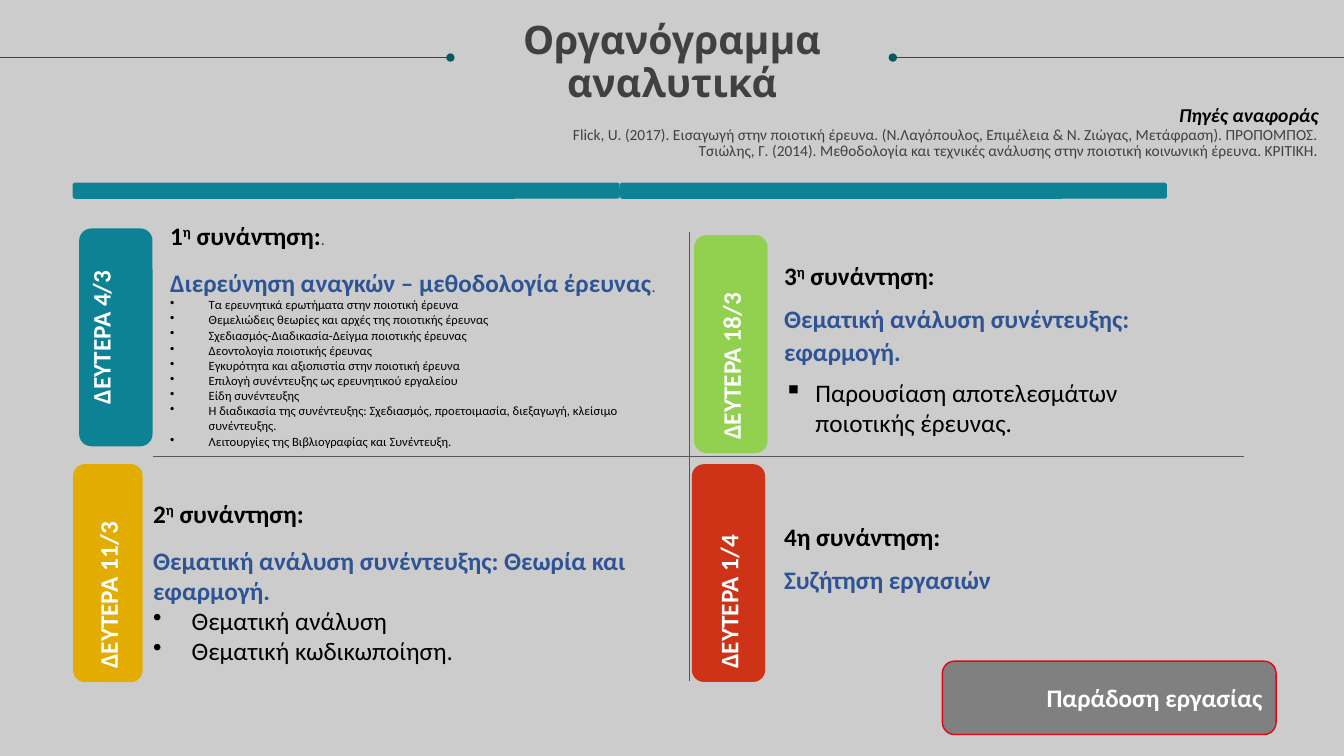
from lxml import etree
from pptx import Presentation
from pptx.dml.color import RGBColor
from pptx.enum.shapes import MSO_CONNECTOR, MSO_SHAPE
from pptx.enum.text import MSO_ANCHOR, PP_ALIGN
from pptx.oxml.ns import qn
from pptx.util import Cm, Pt

# Content: a span is (text, style)
STYLES = {  # font, size, colour, bold, italic
    "title": ("League Spartan", 28, "404040", True, False),
    "sources": ("Calibri", 14, "000000", True, True),
    "citation": ("Calibri", 11, "404040", False, False),
    "meeting": ("Calibri", 18, "000000", True, False),
    "ordinal": ("Calibri", 18, "000000", True, False),
    "subject": ("Calibri", 18, "2F5496", True, False),
    "dot": ("Cabin", 14, "404040", False, False),
    "small": ("Calibri", 9, "000000", False, False),
    "large": ("Calibri", 18, "000000", False, False),
    "label": ("Calibri", 18, "FFFFFF", True, False),
}
HEADER = [
    ("Οργανόγραμμα", "title", PP_ALIGN.CENTER),
    ("αναλυτικά", "title", PP_ALIGN.CENTER),
    ("Πηγές αναφοράς", "sources", PP_ALIGN.RIGHT),
    ("Flick, U. (2017). Εισαγωγή στην ποιοτική έρευνα. (Ν.Λαγόπουλος, Επιμέλεια "
     "& Ν. Ζιώγας, Μετάφραση). ΠΡΟΠΟΜΠΟΣ.", "citation", PP_ALIGN.RIGHT),
    ("Τσιώλης, Γ. (2014). Μεθοδολογία και τεχνικές ανάλυσης στην ποιοτική "
     "κοινωνική έρευνα. ΚΡΙΤΙΚΗ.", "citation", PP_ALIGN.RIGHT),
]
LEFT_SPACING = {"before": 12, "after": 0, "line": 1.0}
RIGHT_SPACING = {"before": 0, "after": 8, "line": 1.07}
MEETINGS = [
    {"area": (4.29, 5.54, 12.4, 6.83), "spacing": LEFT_SPACING,
     "headings": [
         [("1", "meeting"), ("η", "ordinal"), (" συνάντηση:", "meeting"), (".", "dot")],
         [("Διερεύνηση αναγκών – μεθοδολογία έρευνας", "subject"), (".", "dot")]],
     "bullet": ("•", 0.97, "small"),
     "points": [
         "Τα ερευνητικά ερωτήματα στην ποιοτική έρευνα",
         "Θεμελιώδεις θεωρίες και αρχές της ποιοτικής έρευνας",
         "Σχεδιασμός-Διαδικασία-Δείγμα ποιοτικής έρευνας",
         "Δεοντολογία ποιοτικής έρευνας",
         "Εγκυρότητα και αξιοπιστία στην ποιοτική έρευνα",
         "Επιλογή συνέντευξης ως ερευνητικού εργαλείου",
         "Είδη συνέντευξης",
         "Η διαδικασία της συνέντευξης: Σχεδιασμός, προετοιμασία, διεξαγωγή, "
         "κλείσιμο συνέντευξης.",
         "Λειτουργίες της Βιβλιογραφίας και Συνέντευξη."]},
    {"area": (19.76, 6.5, 10.11, 5.26), "spacing": RIGHT_SPACING,
     "headings": [
         [("3", "meeting"), ("η", "ordinal"), (" συνάντηση:", "meeting")],
         [("Θεματική ανάλυση συνέντευξης: εφαρμογή.", "subject")]],
     "bullet": ("▪", 0.79, "large"),
     "points": ["Παρουσίαση αποτελεσμάτων ποιοτικής έρευνας."]},
    {"area": (3.86, 12.55, 13.08, 4.98), "spacing": LEFT_SPACING,
     "headings": [
         [("2", "meeting"), ("η", "ordinal"), (" συνάντηση:", "meeting")],
         [("Θεματική ανάλυση συνέντευξης: Θεωρία και εφαρμογή.", "subject")]],
     "bullet": ("•", 0.97, "large"),
     "points": ["Θεματική ανάλυση", "Θεματική κωδικωποίηση."]},
    {"area": (19.76, 13.08, 10.46, 1.9), "spacing": RIGHT_SPACING,
     "headings": [[("4η συνάντηση:", "meeting")], [("Συζήτηση εργασιών", "subject")]],
     "bullet": None, "points": []},
]
TAB_LENGTH = 5.49
DATE_TABS = [  # text, centre x, centre y, thickness, fill, alignment, bottom inset
    ("ΔΕΥΤΕΡΑ 11/3", 2.72, 14.44, 1.75, "E2AC00", PP_ALIGN.LEFT, 0.13),
    ("ΔΕΥΤΕΡΑ 4/3", 2.92, 8.5, 1.85, "0D8295", PP_ALIGN.CENTER, 0.89),
    ("ΔΕΥΤΕΡΑ 18/3", 18.42, 8.67, 1.85, "92D050", PP_ALIGN.LEFT, 0.13),
    ("ΔΕΥΤΕΡΑ 1/4", 18.36, 14.44, 1.85, "CF3317", PP_ALIGN.LEFT, 0.13),
]
LINES = [  # start x, start y, end x, end y, colour, dot at the end
    (33.87, 1.45, 22.5, 1.45, "085764", True),
    (0, 1.45, 11.35, 1.45, "085764", True),
    (3.86, 11.51, 31.34, 11.51, "585858", False),
    (17.37, 5.84, 17.37, 17.17, "585858", False),
]
BAR_LEFT, BAR_TOP, BAR_WIDTH, BAR_HEIGHT = 1.83, 4.6, 13.79, 0.41


def colour(code):
    return RGBColor.from_string(code)


def add_span(para, text, style):
    span = para.add_run()
    span.text = text
    font = span.font
    font.name, size, code, font.bold, font.italic = STYLES[style]
    font.size = Pt(size)
    font.color.rgb = colour(code)
    if style == "ordinal":
        span._r.get_or_add_rPr().set("baseline", "30000")


def add_bullet(para, sign, indent):
    properties = para._p.get_or_add_pPr()
    properties.set("marL", str(Cm(indent)))
    properties.set("indent", str(-Cm(indent)))
    etree.SubElement(properties, qn("a:buChar")).set("char", sign)


def add_text_box(area):
    frame = slide.shapes.add_textbox(*map(Cm, area)).text_frame
    frame.word_wrap = True
    frame.margin_left = frame.margin_top = frame.margin_right = frame.margin_bottom = 0
    return frame


def next_para(frame, index):
    return frame.add_paragraph() if index else frame.paragraphs[0]


def add_rounded(area, fill, outline=None):
    shape = slide.shapes.add_shape(MSO_SHAPE.ROUNDED_RECTANGLE, *map(Cm, area))
    shape.shadow.inherit = False
    shape.fill.solid()
    shape.fill.fore_color.rgb = colour(fill)
    if outline:
        shape.line.color.rgb = colour(outline)
        shape.line.width = Pt(1)
    else:
        shape.line.fill.background()
    return shape


def add_label(shape, text, align):
    frame = shape.text_frame
    frame.word_wrap = True
    frame.vertical_anchor = MSO_ANCHOR.MIDDLE
    para = frame.paragraphs[0]
    para.alignment = align
    add_span(para, text, "label")


deck = Presentation()
deck.slide_width, deck.slide_height = Cm(33.87), Cm(19.05)
slide = deck.slides.add_slide(deck.slide_layouts[6])
slide.background.fill.solid()
slide.background.fill.fore_color.rgb = colour("CCCCCC")

# Title and sources
header = add_text_box((0.64, 0.53, 32.59, 5.92))
for index, (text, style, align) in enumerate(HEADER):
    para = next_para(header, index)
    para.alignment = align
    para.line_spacing = 0.9
    add_span(para, text, style)

# Title rules and quadrant cross
for *ends, code, dotted in LINES:
    rule = slide.shapes.add_connector(MSO_CONNECTOR.STRAIGHT, *map(Cm, ends))
    rule.line.color.rgb = colour(code)
    rule.line.width = Pt(0.5)
    if dotted:
        etree.SubElement(rule.line._get_or_add_ln(), qn("a:tailEnd")).set("type", "oval")
    etree.SubElement(rule._element.spPr, qn("a:effectLst"))

# Bars above the quadrants
for column in range(2):
    add_rounded((BAR_LEFT + column * BAR_WIDTH, BAR_TOP, BAR_WIDTH, BAR_HEIGHT), "0D8295")

# Date tabs, turned to read upwards
for text, x, y, thickness, fill, align, inset in DATE_TABS:
    tab = add_rounded((x - TAB_LENGTH / 2, y - thickness / 2, TAB_LENGTH, thickness), fill)
    tab.rotation = 270
    tab.text_frame.margin_bottom = Cm(inset)
    add_label(tab, text, align)

# Meetings
for meeting in MEETINGS:
    frame = add_text_box(meeting["area"])
    spacing = meeting["spacing"]
    for index, spans in enumerate(meeting["headings"]):
        para = next_para(frame, index)
        para.line_spacing = spacing["line"]
        para.space_before = Pt(spacing["before"] if index else 0)
        para.space_after = Pt(spacing["after"])
        for text, style in spans:
            add_span(para, text, style)
    for point in meeting["points"]:
        sign, indent, style = meeting["bullet"]
        para = frame.add_paragraph()
        add_bullet(para, sign, indent)
        add_span(para, point, style)

# Assignment box
assignment = add_rounded((23.75, 16.66, 8.41, 1.85), "808080", "E20613")
add_label(assignment, "Παράδοση εργασίας", PP_ALIGN.RIGHT)

deck.save("out.pptx")
